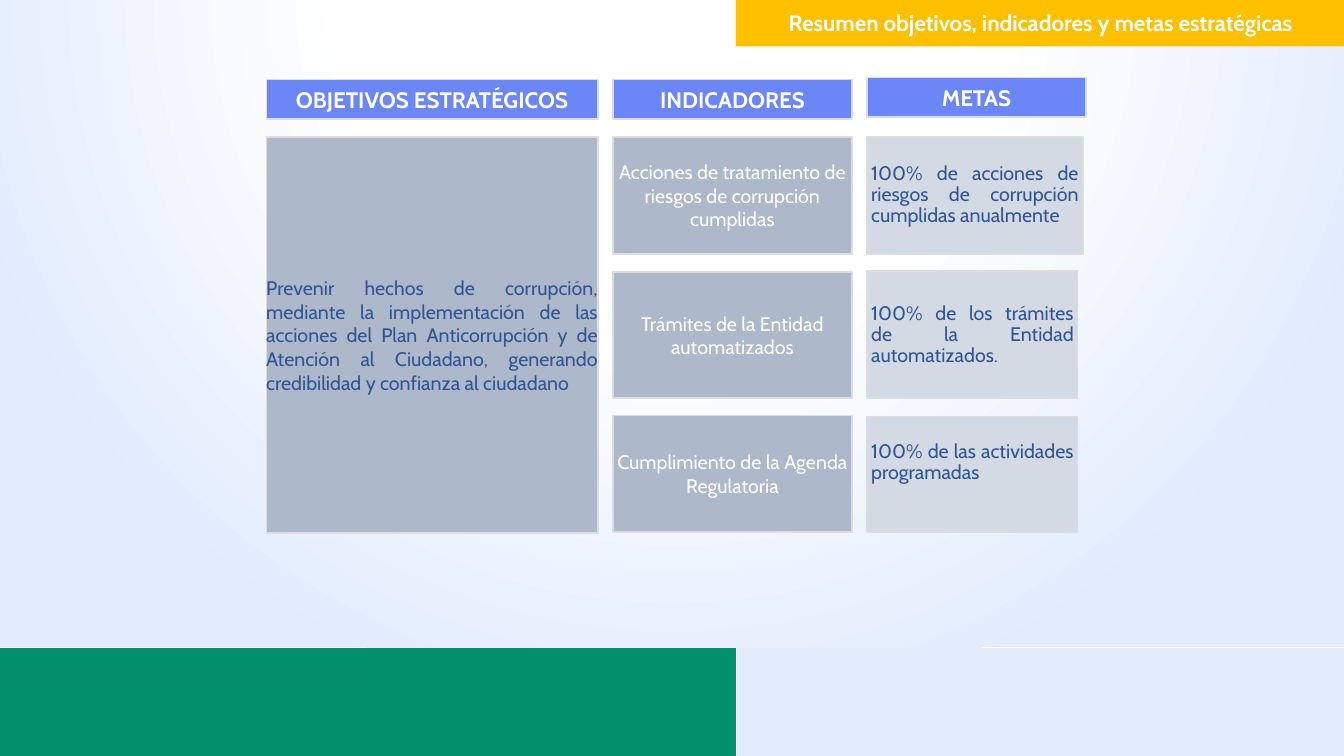
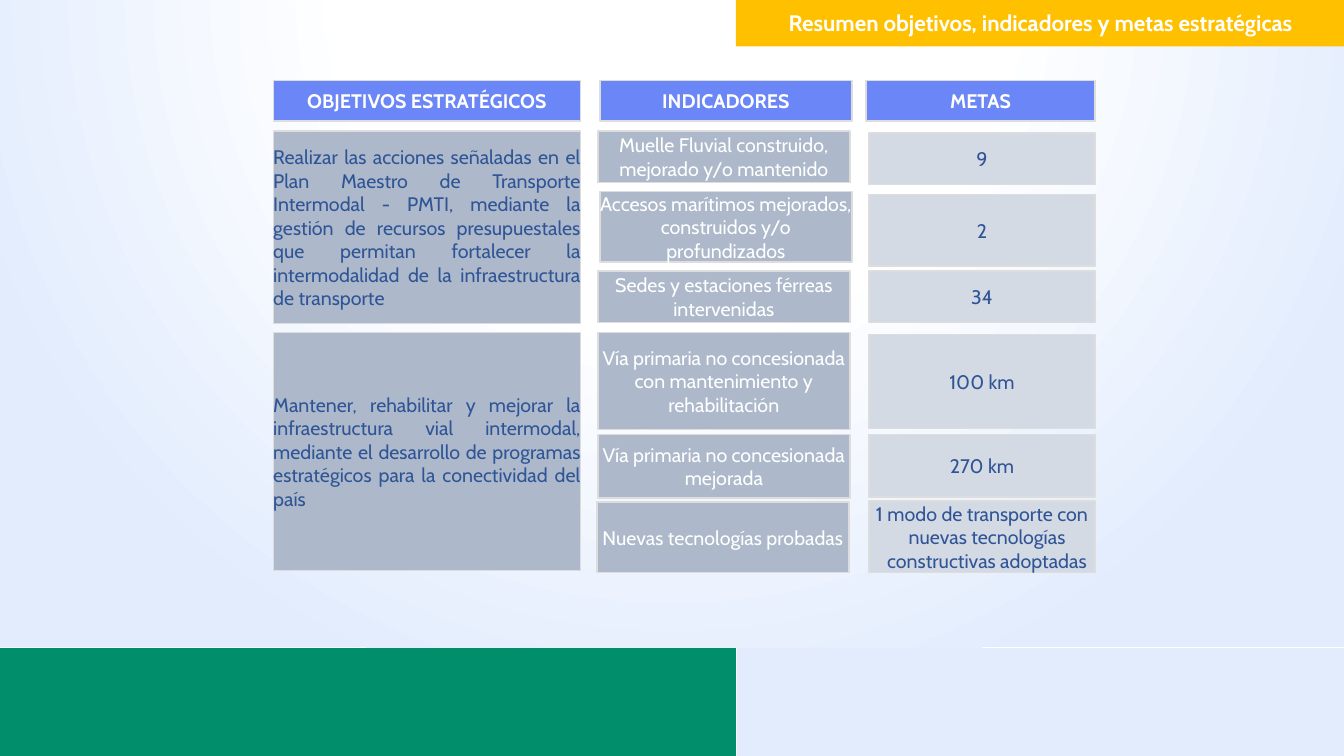
"""Build two slides summarising strategic goals, indicators and targets."""
from dataclasses import dataclass
from typing import NamedTuple

from pptx import Presentation
from pptx.dml.color import RGBColor
from pptx.enum.shapes import MSO_SHAPE
from pptx.enum.text import MSO_ANCHOR as Anchor, PP_ALIGN as Align
from pptx.oxml import parse_xml
from pptx.oxml.ns import nsdecls
from pptx.util import Inches, Pt


@dataclass(frozen=True)
class Theme:
    font: str = "Cabin"
    white: str = "FFFFFF"
    sky: str = "E2ECFD"
    green: str = "018E6B"
    gold: str = "FFC000"
    violet: str = "6B86F7"
    slate: str = "ADB9CA"
    mist: str = "D4DAE4"
    navy: str = "2F5597"
    outline: str = "DDDDDD"
    title_size: int = 16
    body_size: int = 14


THEME = Theme()


class Area(NamedTuple):
    left: float
    top: float
    width: float
    height: float


class TextStyle(NamedTuple):
    color: str
    size: int = THEME.body_size
    bold: bool = False
    align: Align = Align.CENTER
    anchor: Anchor = Anchor.MIDDLE
    insets: tuple[float, float] = (0, 0)
    line_spacing: float | None = None
    hanging: float = 0


class CardStyle(NamedTuple):
    fill: str
    text: TextStyle


class Cell(NamedTuple):
    text: str
    top: float
    height: float
    shift: float = 0
    widen: float = 0
    text_drop: float = 0


class Column(NamedTuple):
    left: float
    width: float
    heading: Cell
    style: CardStyle
    cells: list[Cell]


class Summary(NamedTuple):
    heading_size: int
    columns: list[Column]


TITLE = "Resumen objetivos, indicadores y metas estratégicas"
TITLE_STYLE = TextStyle(THEME.white, THEME.title_size, True, insets=(0.1, 0.05))
GOAL = CardStyle(THEME.slate, TextStyle(THEME.navy, align=Align.JUSTIFY))
INDICATOR = CardStyle(THEME.slate, TextStyle(THEME.white))
TARGET = CardStyle(THEME.mist, TextStyle(THEME.navy, hanging=0.1))
TARGET_SENTENCE = CardStyle(THEME.mist, TextStyle(
    THEME.navy, align=Align.JUSTIFY, anchor=Anchor.TOP, insets=(0.04, 0), line_spacing=0.9))

SUMMARIES = [
    Summary(THEME.title_size, [
        Column(2.64, 3.29, Cell("OBJETIVOS ESTRATÉGICOS", 0.79, 0.39), GOAL, [
            Cell("Prevenir hechos de corrupción, mediante la implementación de las acciones "
                 "del Plan Anticorrupción y de Atención al Ciudadano, generando credibilidad "
                 "y confianza al ciudadano", 1.36, 3.93),
        ]),
        Column(6.08, 2.37, Cell("INDICADORES", 0.79, 0.39), INDICATOR, [
            Cell("Acciones de tratamiento de riesgos de corrupción cumplidas", 1.36, 1.16),
            Cell("Trámites de la Entidad automatizados", 2.7, 1.25),
            Cell("Cumplimiento de la Agenda Regulatoria", 4.12, 1.16),
        ]),
        Column(8.6, 2.09, Cell("METAS", 0.77, 0.39, widen=0.08), TARGET_SENTENCE, [
            Cell("100% de acciones de riesgos de corrupción cumplidas anualmente",
                 1.36, 1.16, widen=0.05, text_drop=0.26),
            Cell("100% de los trámites de la Entidad automatizados.", 2.69, 1.26, text_drop=0.32),
            Cell("100% de las actividades programadas", 4.13, 1.15, text_drop=0.25),
        ]),
    ]),
    Summary(THEME.body_size, [
        Column(2.71, 3.05, Cell("OBJETIVOS ESTRATÉGICOS", 0.8, 0.4), GOAL, [
            Cell("Realizar las acciones señaladas en el Plan Maestro de Transporte Intermodal "
                 "- PMTI, mediante la gestión de recursos presupuestales que permitan "
                 "fortalecer la intermodalidad de la infraestructura de transporte", 1.3, 1.91),
            Cell("Mantener, rehabilitar y mejorar la infraestructura vial intermodal, mediante "
                 "el desarrollo de programas estratégicos para la conectividad del país",
                 3.3, 2.36),
        ]),
        Column(5.93, 2.5, Cell("INDICADORES", 0.8, 0.4, shift=0.02), INDICATOR, [
            Cell("Muelle Fluvial construido, mejorado y/o mantenido", 1.3, 0.51),
            Cell("Accesos marítimos mejorados, construidos y/o profundizados",
                 1.9, 0.7, shift=0.02),
            Cell("Sedes y estaciones férreas intervenidas", 2.69, 0.51),
            Cell("Vía primaria no concesionada con mantenimiento y rehabilitación", 3.3, 0.96),
            Cell("Vía primaria no concesionada mejorada", 4.31, 0.63),
            Cell("Nuevas tecnologías probadas", 4.98, 0.7, shift=-0.01),
        ]),
        Column(8.62, 2.24, Cell("METAS", 0.8, 0.4, shift=-0.03, widen=0.03), TARGET, [
            Cell("9", 1.32, 0.51),
            Cell("2", 1.93, 0.71),
            Cell("34", 2.69, 0.51),
            Cell("100 km", 3.32, 0.93),
            Cell("270 km", 4.31, 0.62),
            Cell("1 modo de transporte con nuevas tecnologías constructivas adoptadas",
                 4.97, 0.71),
        ]),
    ]),
]


def add_panel(slide, area: Area, fill: str, outline: str | None = None):
    panel = slide.shapes.add_shape(MSO_SHAPE.RECTANGLE, *map(Inches, area))
    panel.shadow.inherit = False
    panel.fill.solid()
    panel.fill.fore_color.rgb = RGBColor.from_string(fill)
    if outline:
        panel.line.color.rgb = RGBColor.from_string(outline)
        panel.line.width = Pt(1)
    else:
        panel.line.fill.background()
    return panel


def write(panel, text: str, style: TextStyle, text_drop: float = 0) -> None:
    frame = panel.text_frame
    frame.word_wrap = True
    frame.vertical_anchor = style.anchor
    side, edge = style.insets
    frame.margin_left = frame.margin_right = Inches(side)
    frame.margin_top = Inches(edge + text_drop)
    frame.margin_bottom = Inches(edge)
    paragraph = frame.paragraphs[0]
    paragraph.alignment = style.align
    if style.line_spacing:
        paragraph.line_spacing = style.line_spacing
    if style.hanging:
        properties = paragraph._p.get_or_add_pPr()
        properties.set("marL", str(Inches(style.hanging)))
        properties.set("indent", str(-Inches(style.hanging)))
    run = paragraph.add_run()
    run.text = text
    run.font.name = THEME.font
    run.font.size = Pt(style.size)
    run.font.bold = style.bold
    run.font.color.rgb = RGBColor.from_string(style.color)


def add_glow(slide) -> None:
    glow = add_panel(slide, Area(0, -0.03, 13.37, 6.45), THEME.white)
    stops = "".join(
        f'<a:gs pos="{position * 1000}"><a:srgbClr val="{color}"/></a:gs>'
        for position, color in ((0, THEME.white), (43, THEME.white), (100, THEME.sky)))
    gradient = parse_xml(
        f'<a:gradFill {nsdecls("a")} rotWithShape="1"><a:gsLst>{stops}</a:gsLst>'
        '<a:path path="circle"><a:fillToRect l="50000" t="-80000" r="50000" b="180000"/>'
        '</a:path></a:gradFill>')
    solid = glow._element.spPr.find("{*}solidFill")
    solid.getparent().replace(solid, gradient)


def add_backdrop(slide) -> None:
    add_glow(slide)
    add_panel(slide, Area(-0.02, 6.43, 7.32, 1.07), THEME.green)
    add_panel(slide, Area(7.31, 6.43, 6.02, 1.07), THEME.sky)


def add_title(slide) -> None:
    band = add_panel(slide, Area(7.3, -0.01, 6.04, 0.47), THEME.gold)
    write(band, TITLE, TITLE_STYLE)


def add_card(slide, column: Column, cell: Cell, style: CardStyle) -> None:
    area = Area(column.left + cell.shift, cell.top, column.width + cell.widen, cell.height)
    card = add_panel(slide, area, style.fill, THEME.outline)
    write(card, cell.text, style.text, cell.text_drop)


def add_summary(slide, summary: Summary) -> None:
    heading = CardStyle(THEME.violet, TextStyle(THEME.white, summary.heading_size, True))
    for column in summary.columns:
        add_card(slide, column, column.heading, heading)
        for cell in column.cells:
            add_card(slide, column, cell, column.style)


def main() -> None:
    deck = Presentation()
    deck.slide_width, deck.slide_height = Inches(13.33), Inches(7.5)
    blank = deck.slide_layouts[6]
    for summary in SUMMARIES:
        slide = deck.slides.add_slide(blank)
        add_backdrop(slide)
        add_summary(slide, summary)
        add_title(slide)
    deck.save("out.pptx")


if __name__ == "__main__":
    main()
